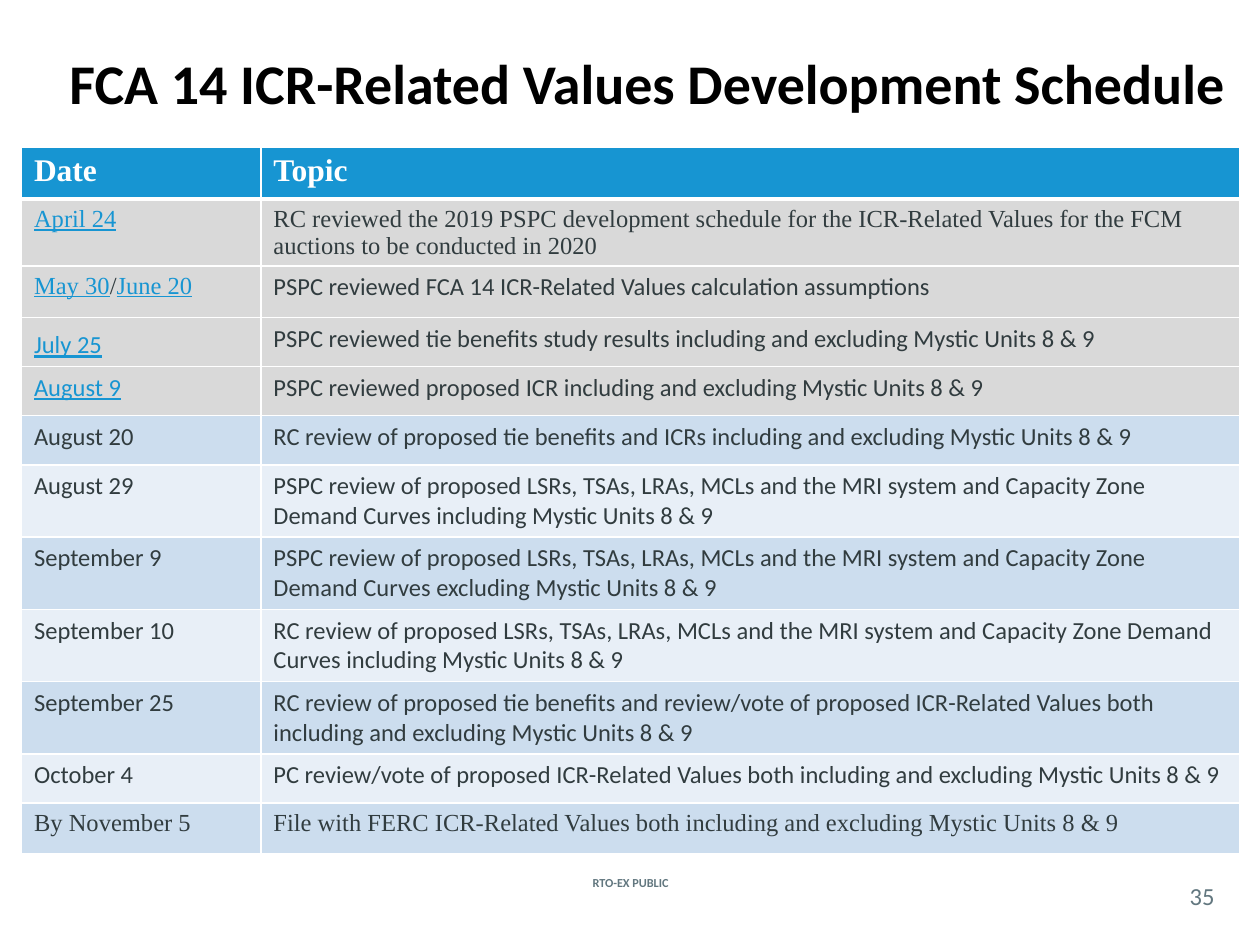
from lxml import etree
from pptx import Presentation
from pptx import util as u
from pptx.dml.color import RGBColor
from pptx.enum import text
from pptx.oxml import ns

THEME = {
    "sans": "Calibri", "serif": "Times New Roman",
    "black": "000000", "white": "FFFFFF", "ink": "313C3F", "muted": "62777F",
    "blue": "1795D2", "done": "D9D9D9", "bands": ("CCDDEE", "E8EFF7"),
    "title": 32, "header": 18, "body": 14, "footer": 7,
}


def add_span(para, words, color, size, font="sans", **styles):
    span = para.add_run()
    span.text = words
    span.font.color.rgb = RGBColor.from_string(THEME[color])
    values = {"name": THEME[font], "size": u.Pt(THEME[size]), "bold": False, **styles}
    for name, value in values.items():
        setattr(span.font, name, value)


def add_border(cell, side, points):
    line = etree.SubElement(cell._tc.get_or_add_tcPr(), ns.qn(f"a:{side}"),
                            w=str(u.Pt(points)))
    fill = etree.SubElement(line, ns.qn("a:solidFill"))
    etree.SubElement(fill, ns.qn("a:srgbClr"), val=THEME["white"])


deck = Presentation()
deck.slide_width, deck.slide_height = u.Inches(10), u.Inches(7.5)
page = deck.slides.add_slide(deck.slide_layouts[5])

# Title
title = page.shapes.title
title.left, title.top = u.Inches(0.45), u.Inches(0.03)
title.width, title.height = u.Inches(9.58), u.Inches(1.25)
title.text_frame.vertical_anchor = text.MSO_ANCHOR.MIDDLE
para = title.text_frame.paragraphs[0]
para.alignment = text.PP_ALIGN.LEFT
add_span(para, "FCA 14 ICR-Related Values Development Schedule", "black", "title", bold=True)

# Schedule: height, dates, topic, date font, topic font
mystic = "including and excluding Mystic Units 8 & 9"
zones = ("review of proposed LSRs, TSAs, LRAs, MCLs and the MRI system "
         "and Capacity Zone Demand Curves")
schedule = [
    (0.41, "Date", "Topic", "serif", "serif"),
    (0.41, "April 24", "RC reviewed the 2019 PSPC development schedule for the ICR-Related "
     "Values for the FCM auctions to be conducted in 2020", "serif", "serif"),
    (0.41, "May 30/June 20", "PSPC reviewed FCA 14 ICR-Related Values calculation assumptions",
     "serif", "sans"),
    (0.39, "July 25", f"PSPC reviewed tie benefits study results {mystic}", "sans", "sans"),
    (0.39, "August 9", f"PSPC reviewed proposed ICR {mystic}", "sans", "sans"),
    (0.39, "August 20", f"RC review of proposed tie benefits and ICRs {mystic}", "sans", "sans"),
    (0.56, "August 29", f"PSPC {zones} including Mystic Units 8 & 9", "sans", "sans"),
    (0.55, "September 9", f"PSPC {zones} excluding Mystic Units 8 & 9", "sans", "sans"),
    (0.47, "September 10", f"RC {zones} including Mystic Units 8 & 9", "sans", "sans"),
    (0.55, "September 25", "RC review of proposed tie benefits and review/vote of proposed "
     f"ICR-Related Values both {mystic}", "sans", "sans"),
    (0.39, "October 4", f"PC review/vote of proposed ICR-Related Values both {mystic}",
     "sans", "sans"),
    (0.40, "By November 5", f"File with FERC ICR-Related Values both {mystic}",
     "serif", "serif"),
]
last_done = 4
height = sum(entry[0] for entry in schedule)
table = page.shapes.add_table(len(schedule), 2, u.Inches(0.17), u.Inches(1.17),
                              u.Inches(9.67), u.Inches(height)).table
for column, width in zip(table.columns, (1.9, 7.77)):
    column.width = u.Inches(width)

for row, (row_height, dates, topic, date_font, topic_font) in enumerate(schedule):
    table.rows[row].height = u.Inches(row_height)
    if row == 0:
        fill = THEME["blue"]
    elif row <= last_done:
        fill = THEME["done"]
    else:
        fill = THEME["bands"][(row - last_done - 1) % 2]

    for col, (words, font) in enumerate(((dates, date_font), (topic, topic_font))):
        cell = table.cell(row, col)
        for side in ("lnL", "lnR", "lnT", "lnB"):
            under_header = (row, side) in ((0, "lnB"), (1, "lnT"))
            add_border(cell, side, 3 if under_header else 1)
        cell.fill.solid()
        cell.fill.fore_color.rgb = RGBColor.from_string(fill)
        para = cell.text_frame.paragraphs[0]
        if row == 0:
            add_span(para, words, "white", "header", font, bold=True)
        elif col == 0 and row <= last_done:
            # Dates of finished meetings look like links
            for index, date in enumerate(words.split("/")):
                if index:
                    add_span(para, "/", "ink", "body", font)
                add_span(para, date, "blue", "body", font, underline=True)
        else:
            add_span(para, words, "ink", "body", font)
        if dates == "July 25" and col == 0:
            cell.vertical_anchor = text.MSO_ANCHOR.BOTTOM

# Footer label and page number
footers = [
    ((4.27, 6.92, 1.47, 0.17), "RTO-EX PUBLIC", "footer", True),
    ((9.33, 6.96, 0.42, 0.29), "35", "body", False),
]
for place, words, size, bold in footers:
    frame = page.shapes.add_textbox(*map(u.Inches, place)).text_frame
    settings = {"word_wrap": True, "vertical_anchor": text.MSO_ANCHOR.MIDDLE,
                "margin_left": 0, "margin_right": 0, "margin_top": 0, "margin_bottom": 0}
    for name, value in settings.items():
        setattr(frame, name, value)
    para = frame.paragraphs[0]
    para.alignment = text.PP_ALIGN.CENTER
    add_span(para, words, "muted", size, bold=bold)

deck.save("out.pptx")
